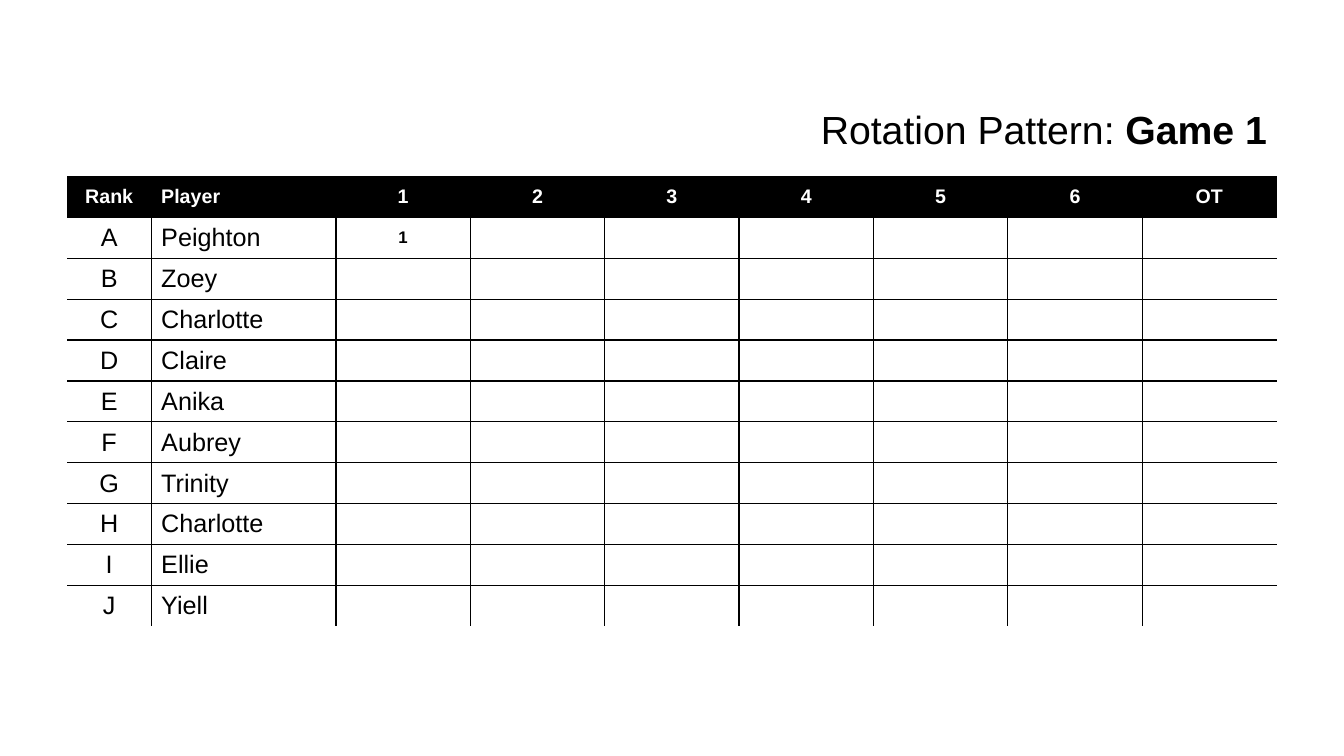
"""Build the rotation pattern slide for game 1."""
import lxml.etree
import pptx
import pptx.dml.color
import pptx.enum.text
import pptx.oxml.ns
import pptx.util

TITLE = (("Rotation Pattern:", False), (" Game 1", True))
HEADER = ("Rank", "Player", "1", "2", "3", "4", "5", "6", "OT")
PLAYERS = ("Peighton", "Zoey", "Charlotte", "Claire", "Anika",
           "Aubrey", "Trinity", "Charlotte", "Ellie", "Yiell")
RANKS = "ABCDEFGHIJ"
ENTRIES = {("A", "1"): "1"}

BLACK = pptx.dml.color.RGBColor(0, 0, 0)
WHITE = pptx.dml.color.RGBColor(255, 255, 255)
ALIGN = pptx.enum.text.PP_ALIGN
MIDDLE = pptx.enum.text.MSO_ANCHOR.MIDDLE

SCALE = 9525
SLIDE_SIZE = (1280, 720)
TITLE_BOX = (376, 96, 840, 55)
TABLE_ORIGIN = (64, 168)
COLUMN_WIDTHS = (80, 176) + (128,) * 7
ROW_HEIGHT = 39

HEADER_FORMAT = {"name": "Arial", "size": pptx.util.Pt(14), "bold": True}
NAME_FORMAT = {"name": "Arial", "size": pptx.util.Pt(18), "bold": False}
ENTRY_FORMAT = {"name": "Arial", "size": pptx.util.Pt(12), "bold": True}
TITLE_FORMAT = {"name": "Arial", "size": pptx.util.Pt(28)}


def px(lengths):
    return [length * SCALE for length in lengths]


def add_span(para, text, color, values):
    span = para.add_run()
    span.text = text
    span.font.color.rgb = color
    for name, value in values.items():
        setattr(span.font, name, value)


def set_borders(cell, inner_sides):
    properties = cell._tc.get_or_add_tcPr()
    for side, inner in inner_sides.items():
        line = lxml.etree.SubElement(
            properties, pptx.oxml.ns.qn(f"a:ln{side}"), w=str(pptx.util.Pt(1)))
        kind = "a:solidFill" if inner else "a:noFill"
        fill = lxml.etree.SubElement(line, pptx.oxml.ns.qn(kind))
        if inner:
            lxml.etree.SubElement(
                fill, pptx.oxml.ns.qn("a:srgbClr"), val=str(BLACK))


def add_title(page):
    box = page.shapes.add_textbox(*px(TITLE_BOX))
    box.text_frame.word_wrap = True
    para = box.text_frame.paragraphs[0]
    para.alignment = ALIGN.RIGHT
    for text, bold in TITLE:
        add_span(para, text, BLACK, {**TITLE_FORMAT, "bold": bold})


def add_rotation_table(page):
    rows = [HEADER]
    for rank, player in zip(RANKS, PLAYERS):
        entries = [ENTRIES.get((rank, period), "") for period in HEADER[2:]]
        rows.append((rank, player, *entries))
    size = (sum(COLUMN_WIDTHS), ROW_HEIGHT * len(rows))
    table = page.shapes.add_table(
        len(rows), len(HEADER), *px(TABLE_ORIGIN + size)).table
    for column, width in zip(table.columns, px(COLUMN_WIDTHS)):
        column.width = width
    for i, row in enumerate(rows):
        for j, text in enumerate(row):
            cell = table.cell(i, j)
            set_borders(cell, {"L": j > 0, "R": j < len(HEADER) - 1,
                               "T": i > 0, "B": i < len(rows) - 1})
            cell.fill.solid()
            cell.fill.fore_color.rgb = WHITE if i else BLACK
            cell.vertical_anchor = MIDDLE
            para = cell.text_frame.paragraphs[0]
            para.alignment = ALIGN.LEFT if j == 1 else ALIGN.CENTER
            body_format = NAME_FORMAT if j < 2 else ENTRY_FORMAT
            if text:
                add_span(para, text, BLACK if i else WHITE,
                         body_format if i else HEADER_FORMAT)


def main():
    deck = pptx.Presentation()
    deck.slide_width, deck.slide_height = px(SLIDE_SIZE)
    page = deck.slides.add_slide(deck.slide_layouts[6])
    add_rotation_table(page)
    add_title(page)
    deck.save("out.pptx")


if __name__ == "__main__":
    main()
